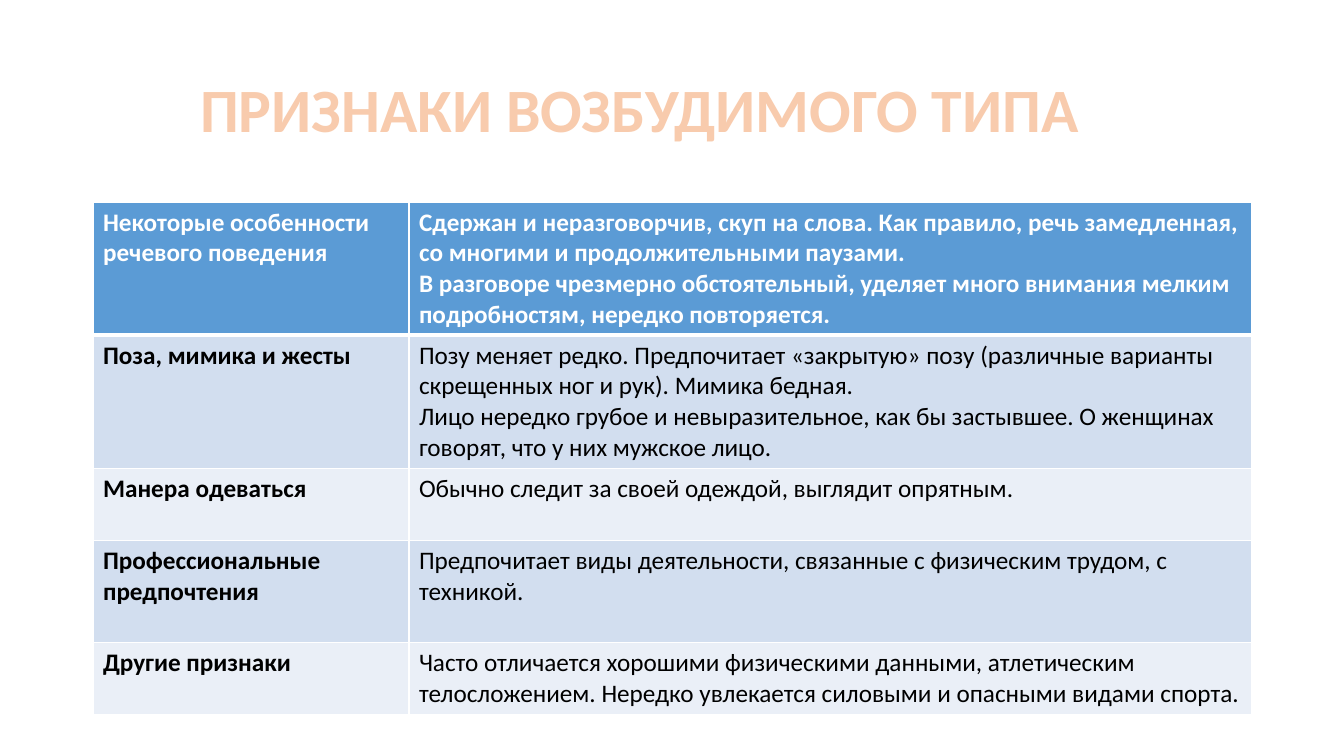
from pptx import Presentation
from pptx.dml.color import RGBColor
from pptx.enum.text import MSO_ANCHOR
from pptx.oxml import parse_xml
from pptx.oxml.ns import nsdecls
from pptx.util import Pt

THEME = {
    "font": "Calibri", "title_size": 44, "body_size": 18,
    "title": "F8CBAD", "title_outline": "ED7D31",
    "header": "5B9BD5", "bands": ("EAEFF7", "D2DEEF"),
    "header_text": "FFFFFF", "body_text": "000000", "border": "FFFFFF",
}
SCALE = 914400 / 100.8


def px(length):
    return round(length * SCALE)


def line_xml(tag, color, points):
    return parse_xml(
        f'<a:{tag} {nsdecls("a")} w="{Pt(points)}"><a:solidFill>'
        f'<a:srgbClr val="{color}"/></a:solidFill></a:{tag}>')


prs = Presentation()
prs.slide_width, prs.slide_height = px(1344), px(756)
slide = prs.slides.add_slide(prs.slide_layouts[5])

# Title
title = slide.shapes.title
title.left, title.top, title.width, title.height = px(93), px(40), px(1159), px(146)
title_frame = title.text_frame
title_frame.text = "ПРИЗНАКИ ВОЗБУДИМОГО ТИПА"
title_frame.word_wrap = True
title_frame.vertical_anchor = MSO_ANCHOR.MIDDLE
heading = title_frame.paragraphs[0]
heading.line_spacing = 0.9
heading_props = heading._p.get_or_add_pPr()
heading_props.set("algn", "l")
heading_props.set("marL", str(px(97)))
heading_font = heading.runs[0].font
heading_font.name = THEME["font"]
heading_font.size = Pt(THEME["title_size"])
heading_font.bold = True
heading_font.color.rgb = RGBColor.from_string(THEME["title"])
heading.runs[0]._r.get_or_add_rPr().insert(0, line_xml("ln", THEME["title_outline"], 1.75))

# Traits: height, label, description
traits = [
    (132, "Некоторые особенности речевого поведения",
     "Сдержан и неразговорчив, скуп на слова. Как правило, речь замедленная, "
     "со многими и продолжительными паузами.\n"
     "В разговоре чрезмерно обстоятельный, уделяет много внимания мелким "
     "подробностям, нередко повторяется."),
    (133, "Поза, мимика и жесты",
     "Позу меняет редко. Предпочитает «закрытую» позу (различные варианты "
     "скрещенных ног и рук). Мимика бедная.\n"
     "Лицо нередко грубое и невыразительное, как бы застывшее. "
     "О женщинах говорят, что у них мужское лицо."),
    (72, "Манера одеваться",
     "Обычно следит за своей одеждой, выглядит опрятным."),
    (102, "Профессиональные предпочтения",
     "Предпочитает виды деятельности, связанные с физическим трудом, с техникой."),
    (72, "Другие признаки",
     "Часто отличается хорошими физическими данными, атлетическим "
     "телосложением. Нередко увлекается силовыми и опасными видами спорта."),
]
column_widths = (316, 843)
table = slide.shapes.add_table(
    len(traits), len(column_widths), px(93), px(202),
    px(sum(column_widths)), px(sum(trait[0] for trait in traits))).table
for column, width in zip(table.columns, column_widths):
    column.width = px(width)

# Table rows
for row, (height, *texts) in enumerate(traits):
    table.rows[row].height = px(height)
    is_header = row == 0
    fill = THEME["header"] if is_header else THEME["bands"][row % 2]
    ink = THEME["header_text"] if is_header else THEME["body_text"]
    borders = {"lnL": 1, "lnR": 1, "lnT": 3 if row == 1 else 1, "lnB": 3 if is_header else 1}
    for col, text in enumerate(texts):
        cell = table.cell(row, col)
        cell.text_frame.text = text
        cell.fill.solid()
        cell.fill.fore_color.rgb = RGBColor.from_string(fill)
        for paragraph in cell.text_frame.paragraphs:
            font = paragraph.runs[0].font
            font.name = THEME["font"]
            font.size = Pt(THEME["body_size"])
            font.bold = is_header or col == 0
            font.color.rgb = RGBColor.from_string(ink)
        # Borders come before the fill
        for position, (side, points) in enumerate(borders.items()):
            cell._tc.get_or_add_tcPr().insert(position, line_xml(side, THEME["border"], points))

prs.save("out.pptx")
